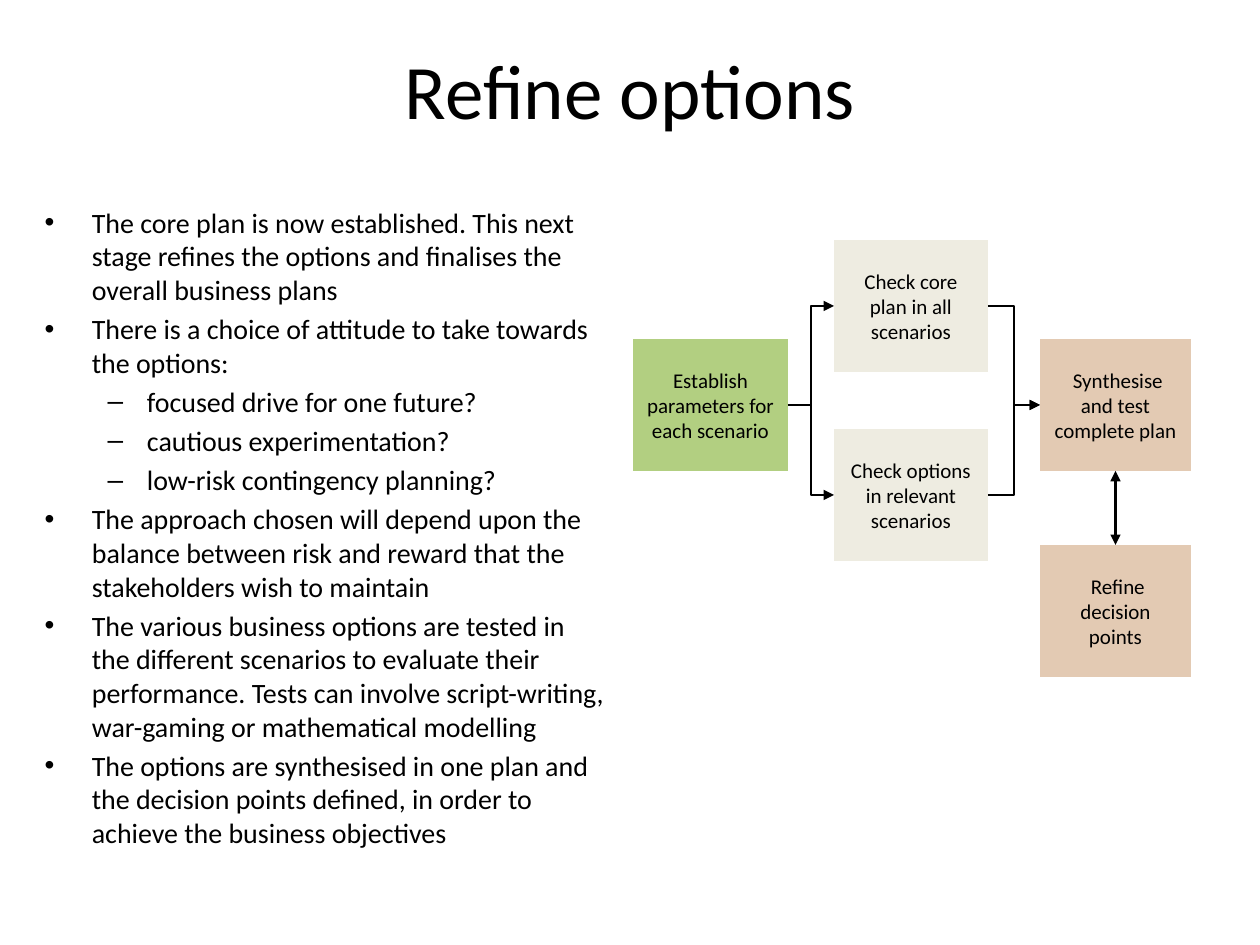
"""Build the slide on refining options: a bullet list beside a flow diagram."""
from dataclasses import dataclass

from lxml.etree import SubElement
from pptx import Presentation
from pptx.dml.color import RGBColor
from pptx.enum.shapes import MSO_CONNECTOR, MSO_SHAPE
from pptx.enum.text import MSO_ANCHOR, MSO_AUTO_SIZE, PP_ALIGN
from pptx.oxml.ns import qn
from pptx.util import Pt

EMU_PER_PX = 914400 / 126
TOP, LEFT, BOTTOM, RIGHT = range(4)


@dataclass(frozen=True)
class Theme:
    font: str = "Calibri"
    ink: str = "000000"
    start: str = "B2CF81"
    check: str = "EEECE1"
    result: str = "E3CAB3"
    title_size: int = 44
    body_size: int = 16
    box_size: int = 12
    line_width: float = 1.5


def px(length):
    return round(length * EMU_PER_PX)


def set_text(paragraph, text, *, font, size, color, align=None, level=0):
    paragraph.level = level
    paragraph.alignment = align
    run = paragraph.add_run()
    run.text = text
    run.font.name = font
    run.font.size = Pt(size)
    run.font.color.rgb = RGBColor.from_string(color)


class SlideBuilder:
    def __init__(self, slide, theme):
        self.slide = slide
        self.theme = theme

    def add_text(self, paragraph, text, size, **options):
        set_text(paragraph, text, font=self.theme.font, size=size, color=self.theme.ink, **options)

    def place(self, placeholder, left, top, width, height):
        placeholder.left, placeholder.top = px(left), px(top)
        placeholder.width, placeholder.height = px(width), px(height)
        placeholder.text_frame.auto_size = MSO_AUTO_SIZE.NONE
        return placeholder.text_frame

    def title(self, text, *bounds):
        frame = self.place(self.slide.shapes.title, *bounds)
        frame.vertical_anchor = MSO_ANCHOR.MIDDLE
        self.add_text(frame.paragraphs[0], text, self.theme.title_size, align=PP_ALIGN.CENTER)

    def bullets(self, points, *bounds):
        frame = self.place(self.slide.placeholders[1], *bounds)
        for index, (level, text) in enumerate(points):
            paragraph = frame.add_paragraph() if index else frame.paragraphs[0]
            self.add_text(paragraph, text, self.theme.body_size, level=level)

    def box(self, text, fill, left, top, width, height=132):
        step = self.slide.shapes.add_shape(
            MSO_SHAPE.FLOWCHART_PROCESS, px(left), px(top), px(width), px(height))
        step.shadow.inherit = False
        step.fill.solid()
        step.fill.fore_color.rgb = RGBColor.from_string(fill)
        step.line.fill.background()
        frame = step.text_frame
        frame.word_wrap = True
        frame.vertical_anchor = MSO_ANCHOR.MIDDLE
        self.add_text(frame.paragraphs[0], text, self.theme.box_size, align=PP_ALIGN.CENTER)
        return step

    def arrow(self, source, target, sites=(RIGHT, LEFT), kind=MSO_CONNECTOR.ELBOW,
              ends=("tailEnd",)):
        link = self.slide.shapes.add_connector(kind, 0, 0, 0, 0)
        link.begin_connect(source, sites[0])
        link.end_connect(target, sites[1])
        link.line.width = Pt(self.theme.line_width)
        link.line.color.rgb = RGBColor.from_string(self.theme.ink)
        properties = link._element.spPr
        for end in ends:
            SubElement(properties.find(qn("a:ln")), qn(f"a:{end}"), type="triangle")
        SubElement(properties, qn("a:effectLst"))


POINTS = [
    (0, "The core plan is now established. This next stage refines the options and "
        "finalises the overall business plans"),
    (0, "There is a choice of attitude to take towards the options:"),
    (1, "focused drive for one future?"),
    (1, "cautious experimentation?"),
    (1, "low-risk contingency planning?"),
    (0, "The approach chosen will depend upon the balance between risk and reward that "
        "the stakeholders wish to maintain"),
    (0, "The various business options are tested in the different scenarios to evaluate "
        "their performance. Tests can involve script-writing, war-gaming or mathematical "
        "modelling"),
    (0, "The options are synthesised in one plan and the decision points defined, in "
        "order to achieve the business objectives"),
]


def main():
    theme = Theme()
    deck = Presentation()
    deck.slide_width, deck.slide_height = px(1260), px(945)
    builder = SlideBuilder(deck.slides.add_slide(deck.slide_layouts[1]), theme)

    builder.title("Refine options", 63, 10, 1134, 158)
    builder.bullets(POINTS, 32, 199, 588, 683)

    parameters = builder.box("Establish parameters for each scenario", theme.start, 633, 339, 155)
    checks = [
        builder.box(text, theme.check, 834, top, 154)
        for text, top in (("Check core plan in all scenarios", 240),
                          ("Check options in relevant scenarios", 429))
    ]
    synthesis, decisions = [
        builder.box(text, theme.result, 1040, top, 151)
        for text, top in ((" Synthesise and test complete plan", 339),
                          (" Refine decision points", 545))
    ]

    builder.arrow(synthesis, decisions, (BOTTOM, TOP), MSO_CONNECTOR.STRAIGHT,
                  ("headEnd", "tailEnd"))
    for check in checks:
        builder.arrow(parameters, check)
        builder.arrow(check, synthesis)

    deck.save("out.pptx")


if __name__ == "__main__":
    main()
